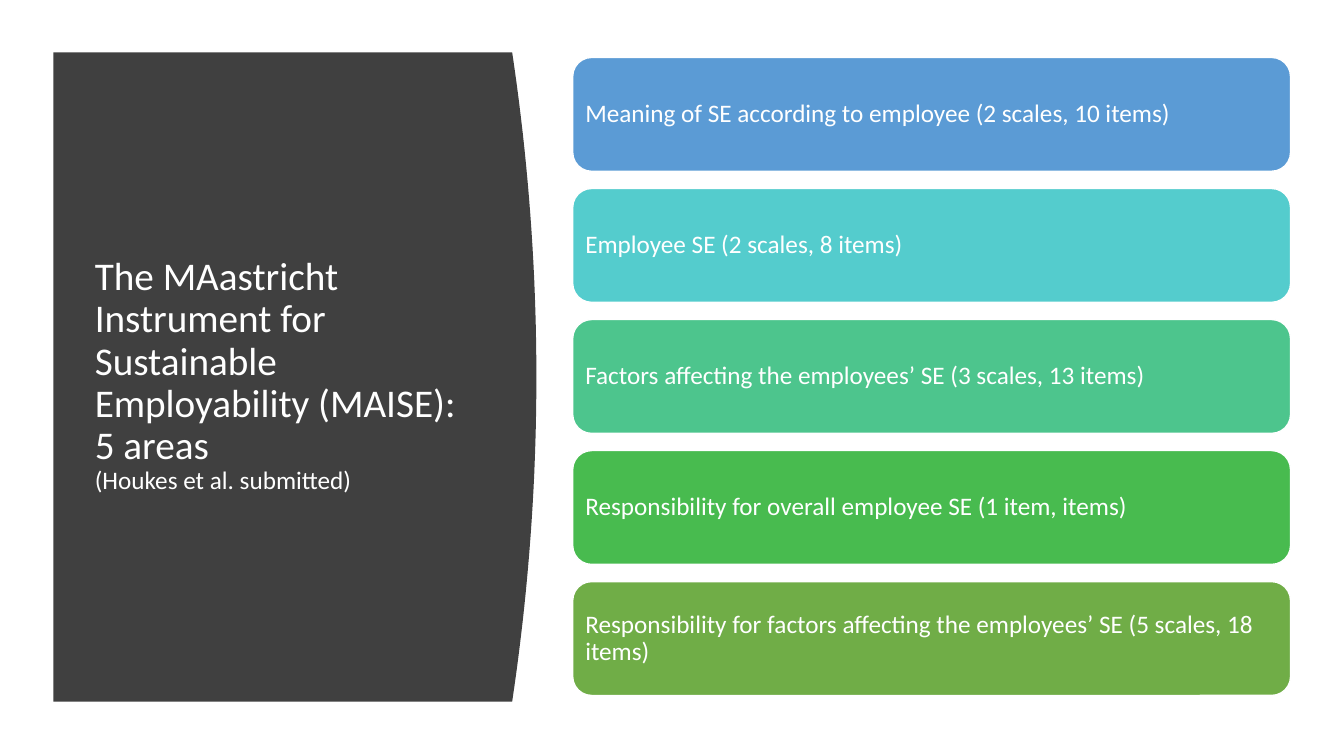
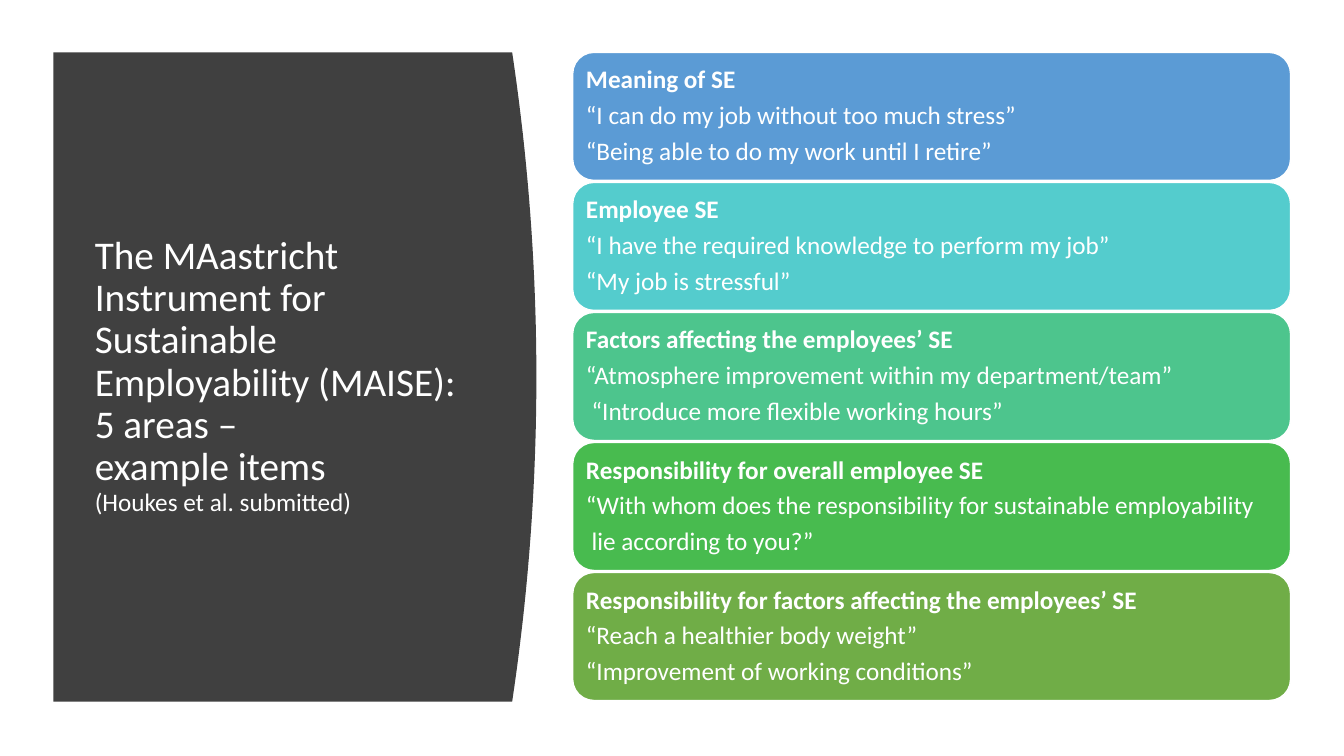
from lxml import etree
from pptx import Presentation
from pptx.dml.color import RGBColor
from pptx.enum.shapes import MSO_SHAPE
from pptx.enum.text import MSO_ANCHOR, MSO_AUTO_SIZE, PP_ALIGN
from pptx.oxml.ns import qn
from pptx.util import Emu, Pt

ROUNDED = MSO_SHAPE.ROUNDED_RECTANGLE
MIDDLE = MSO_ANCHOR.MIDDLE
LEFT = PP_ALIGN.LEFT
NO_AUTOFIT = MSO_AUTO_SIZE.NONE

EMU_PER_PX = 9144
SLIDE_WIDTH, SLIDE_HEIGHT = 1333, 750
TITLE_ONLY_LAYOUT = 5

FONT = "Calibri"
WHITE = "FFFFFF"
PANEL_COLOR = "404040"
AREA_COLORS = ["5B9BD5", "54CCCD", "4DC58D", "48BB4F", "70AD47"]
TITLE_SIZE, TEXT_SIZE = 28, 18
LINE_SPACING = 0.9

PANEL_LEFT, PANEL_TOP, PANEL_RIGHT, PANEL_BOTTOM = 53, 52, 508, 696
PANEL_BULGE = 24
CURVE_STEPS = 40
TITLE_BOX = (94, 111, 374, 524)
CARD_LEFT, CARD_WIDTH, CARD_INSET = 568, 712, 7

CITATION = "(Houkes et al. submitted)"
INSTRUMENT = "The MAastricht Instrument for Sustainable Employability (MAISE): 5 areas "
AREAS = [
    ["Meaning of SE according to employee (2 scales, 10 items)"],
    ["Employee SE (2 scales, 8 items)"],
    ["Factors affecting the employees’ SE (3 scales, 13 items)"],
    ["Responsibility for overall employee SE (1 item, items)"],
    ["Responsibility for factors affecting the employees’ SE (5 scales, 18 items)"],
]
EXAMPLES = [
    ["Meaning of SE",
     "“I can do my job without too much stress”",
     "“Being able to do my work until I retire”"],
    ["Employee SE",
     "“I have the required knowledge to perform my job”",
     "“My job is stressful”"],
    ["Factors affecting the employees’ SE",
     "“Atmosphere improvement within my department/team”",
     " “Introduce more flexible working hours”"],
    ["Responsibility for overall employee SE",
     "“With whom does the responsibility for sustainable employability",
     " lie according to you?”"],
    ["Responsibility for factors affecting the employees’ SE",
     "“Reach a healthier body weight”",
     "“Improvement of working conditions”"],
]


def px(length):
    return Emu(round(length * EMU_PER_PX))


def rgb(color):
    return RGBColor.from_string(color)


def format_run(run, size, bold=False):
    run.font.name = FONT
    run.font.size = Pt(size)
    run.font.bold = bold
    run.font.color.rgb = rgb(WHITE)


def prepare_frame(frame, inset):
    frame.word_wrap = True
    frame.auto_size = NO_AUTOFIT
    frame.vertical_anchor = MIDDLE
    frame.margin_left = frame.margin_right = px(inset)
    frame.margin_top = frame.margin_bottom = px(inset)


def add_panel(slide):
    """Draw the dark panel with its bowed right side, behind the title."""
    half = (PANEL_BOTTOM - PANEL_TOP) / 2
    points = []
    for step in range(CURVE_STEPS + 1):
        offset = 2 * step / CURVE_STEPS - 1
        x = PANEL_RIGHT + PANEL_BULGE * (1 - offset ** 2)
        points.append((px(x), px(PANEL_TOP + half * (1 + offset))))
    points.append((px(PANEL_LEFT), px(PANEL_BOTTOM)))
    builder = slide.shapes.build_freeform(px(PANEL_LEFT), px(PANEL_TOP))
    builder.add_line_segments(points, close=True)
    panel = builder.convert_to_shape()
    panel.shadow.inherit = False
    panel.fill.solid()
    panel.fill.fore_color.rgb = rgb(PANEL_COLOR)
    panel.line.fill.background()
    slide.shapes.title._element.addprevious(panel._element)


def set_title(slide, lines):
    """Fill the title with the lines and a smaller citation below them."""
    title = slide.shapes.title
    title.left, title.top, title.width, title.height = map(px, TITLE_BOX)
    frame = title.text_frame
    prepare_frame(frame, 0)
    frame.text = "\v".join(lines + [CITATION])
    paragraph = frame.paragraphs[0]
    paragraph.alignment = LEFT
    paragraph.line_spacing = LINE_SPACING
    for run in paragraph.runs:
        format_run(run, TEXT_SIZE if run.text == CITATION else TITLE_SIZE)
    for line_break in paragraph._p.findall(qn("a:br")):
        etree.SubElement(line_break, qn("a:rPr"), sz=str(TITLE_SIZE * 100))


def add_card(slide, top, height, color, lines):
    """Add a rounded card; the first of several lines is its bold heading."""
    card = slide.shapes.add_shape(
        ROUNDED, px(CARD_LEFT), px(top), px(CARD_WIDTH), px(height))
    card.shadow.inherit = False
    card.fill.solid()
    card.fill.fore_color.rgb = rgb(color)
    card.line.color.rgb = rgb(WHITE)
    card.line.width = Pt(1)
    frame = card.text_frame
    prepare_frame(frame, CARD_INSET)
    frame.text = "\n".join(lines)
    for index, paragraph in enumerate(frame.paragraphs):
        paragraph.alignment = LEFT
        paragraph.line_spacing = LINE_SPACING
        paragraph.space_after = Pt(6)
        is_heading = index == 0 and len(lines) > 1
        format_run(paragraph.runs[0], TEXT_SIZE, is_heading)


def add_area_slide(presentation, title_lines, cards, top, height, gap):
    layout = presentation.slide_layouts[TITLE_ONLY_LAYOUT]
    slide = presentation.slides.add_slide(layout)
    add_panel(slide)
    set_title(slide, title_lines)
    for index, (color, lines) in enumerate(zip(AREA_COLORS, cards)):
        add_card(slide, top + index * (height + gap), height, color, lines)


def main():
    presentation = Presentation()
    presentation.slide_width = px(SLIDE_WIDTH)
    presentation.slide_height = px(SLIDE_HEIGHT)
    add_area_slide(presentation, [INSTRUMENT], AREAS, top=57, height=113, gap=17)
    add_area_slide(presentation, [INSTRUMENT + "– ", "example items"], EXAMPLES,
                   top=52, height=127, gap=2)
    presentation.save("out.pptx")


if __name__ == "__main__":
    main()
